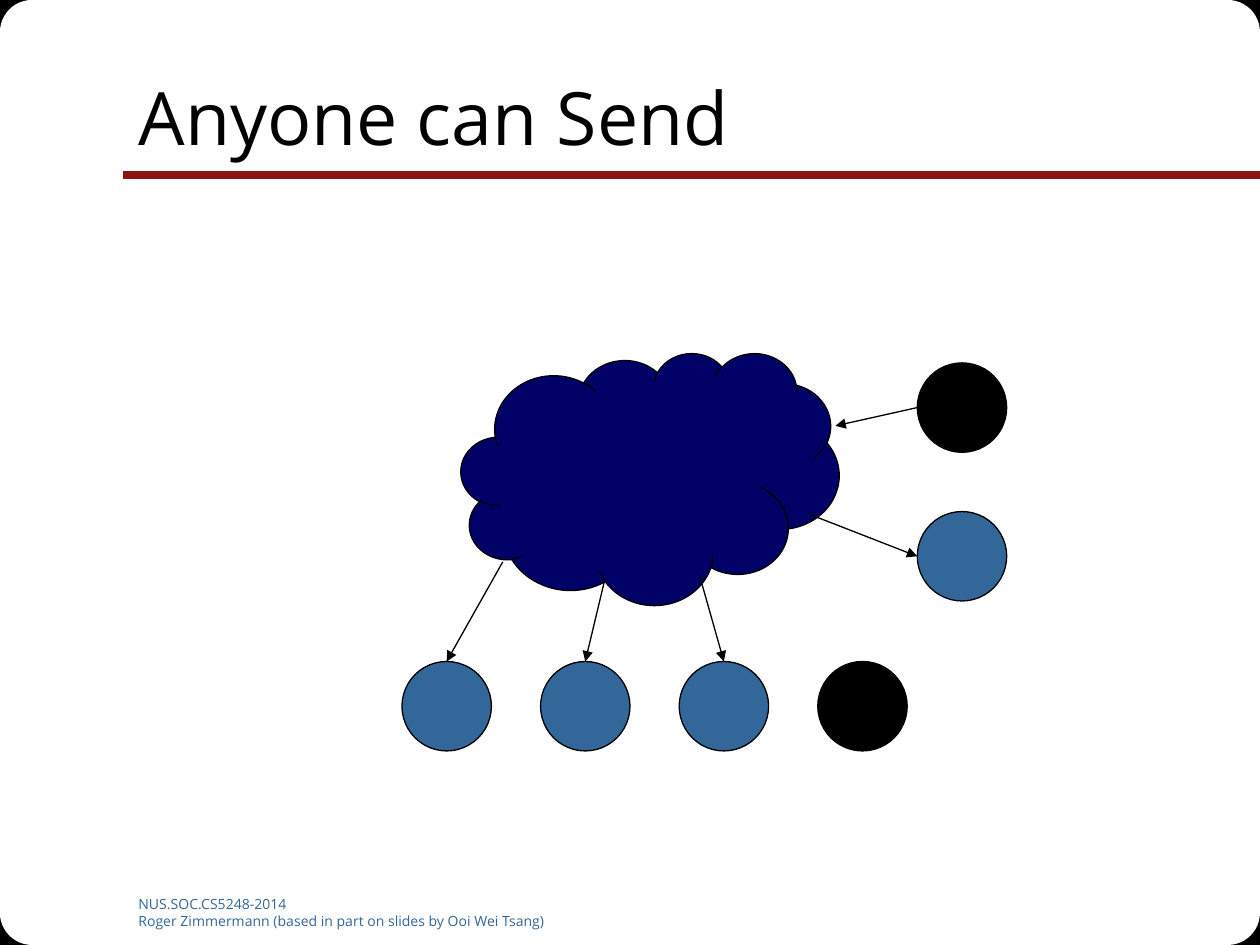
from dataclasses import dataclass

from lxml import etree
from pptx import Presentation
from pptx.dml.color import RGBColor
from pptx.enum.shapes import MSO_CONNECTOR, MSO_SHAPE
from pptx.enum.text import MSO_ANCHOR, PP_ALIGN
from pptx.oxml.ns import qn
from pptx.util import Inches, Pt

RECT, ROUND = MSO_SHAPE.RECTANGLE, MSO_SHAPE.ROUNDED_RECTANGLE
OVAL, CLOUD = MSO_SHAPE.OVAL, MSO_SHAPE.CLOUD
STRAIGHT = MSO_CONNECTOR.STRAIGHT
TOP, MIDDLE, LEFT = MSO_ANCHOR.TOP, MSO_ANCHOR.MIDDLE, PP_ALIGN.LEFT
W, H = 10, 7.5


@dataclass(frozen=True)
class Theme:
    font: str = "Open Sans"
    ink: str = "000000"
    paper: str = "FFFFFF"
    rule: str = "891411"
    node: str = "336699"
    cloud: str = "000066"
    title_size: float = 42
    footer_size: float = 8
    thin: float = 0.75
    thick: float = 4.5


T = Theme()


def rgb(value):
    return RGBColor.from_string(value)


def place(sp, x, y, w, h):
    sp.left, sp.top, sp.width, sp.height = (Inches(v) for v in (x, y, w, h))


def add_text(tf, text, size, color, anchor=TOP):
    tf.word_wrap = True
    tf.vertical_anchor = anchor
    for i, line in enumerate(text.split("\n")):
        p = tf.paragraphs[0] if i == 0 else tf.add_paragraph()
        p.alignment = LEFT
        r = p.add_run()
        r.text = line
        r.font.name = T.font
        r.font.size = Pt(size)
        r.font.color.rgb = rgb(color)


def add_shape(s, kind, box, fill, line=None):
    sp = s.shapes.add_shape(kind, *(Inches(v) for v in box))
    sp.shadow.inherit = False
    sp.fill.solid()
    sp.fill.fore_color.rgb = rgb(fill)
    if line:
        sp.line.color.rgb = rgb(line)
        sp.line.width = Pt(T.thin)
    else:
        sp.line.fill.background()
    return sp


def add_line(s, start, end, color, width, arrow=False):
    c = s.shapes.add_connector(STRAIGHT, *(Inches(v) for v in start + end))
    c.line.color.rgb = rgb(color)
    c.line.width = Pt(width)
    if arrow:
        etree.SubElement(c.get_or_add_ln(), qn("a:tailEnd"), type="triangle")
    etree.SubElement(c._element.spPr, qn("a:effectLst"))


def add_corners(s, x, y, w, h):
    for kind, fill, line, size in ((RECT, T.ink, T.ink, 0.43),
                                   (ROUND, T.paper, None, 1.53)):
        for left in (x, x + w - size):
            for top in (y, y + h - size):
                add_shape(s, kind, (left, top, size, size), fill, line)


def add_header(s, x, y, w, h, text):
    rule_y = y + h - 0.16
    add_line(s, (W, rule_y), (x - 0.02, rule_y), T.rule, T.thick)
    title = s.shapes.title
    s.shapes._spTree.append(title._element)
    place(title, x, y, w, h)
    add_text(title.text_frame, text, T.title_size, T.ink, anchor=MIDDLE)


def add_footer(s, x, y, w, h, text):
    tb = s.shapes.add_textbox(*(Inches(v) for v in (x, y, w, h)))
    add_text(tb.text_frame, text, T.footer_size, T.node)


def add_network(s, x, y, w, h):
    d, pitch = 0.71, 1.1
    cx, cy, cw, ch = x + 0.47, y, 3, 2
    add_shape(s, CLOUD, (cx, cy, cw, ch), T.cloud, T.ink)

    row = [(x + i * pitch, y + h - d) for i in range(4)]
    side = [(x + w - d, y + 0.08 + i * 1.18) for i in range(2)]
    senders = (row[3], side[0])
    for left, top in row + side:
        fill = T.ink if (left, top) in senders else T.node
        add_shape(s, OVAL, (left, top, d, d), fill, T.ink)

    def edge(fx, fy):
        return cx + fx * cw, cy + fy * ch

    exits = (edge(0.11, 0.83), edge(0.38, 0.9), edge(0.63, 0.88))
    links = [(start, (left + d / 2, top))
             for start, (left, top) in zip(exits, row)]
    hubs = [(left, top + d / 2) for left, top in side]
    links += [(edge(0.92, 0.64), hubs[1]), (hubs[0], edge(0.99, 0.29))]
    for start, end in links:
        add_line(s, start, end, T.ink, T.thin, arrow=True)


def main():
    prs = Presentation()
    prs.slide_width, prs.slide_height = Inches(W), Inches(H)
    s = prs.slides.add_slide(prs.slide_layouts[5])
    s.background.fill.solid()
    s.background.fill.fore_color.rgb = rgb(T.paper)
    add_corners(s, 0, 0, W, H)
    add_header(s, 0.1 * W, 0.04 * H, 0.85 * W, H / 6, "Anyone can Send")
    add_footer(s, 0.1 * W, 7.06, 3.75, 0.28,
               "NUS.SOC.CS5248-2014\n"
               "Roger Zimmermann (based in part on slides by Ooi Wei Tsang)")
    add_network(s, 3.19, 2.8, 4.8, 3.16)
    prs.save("out.pptx")


if __name__ == "__main__":
    main()
